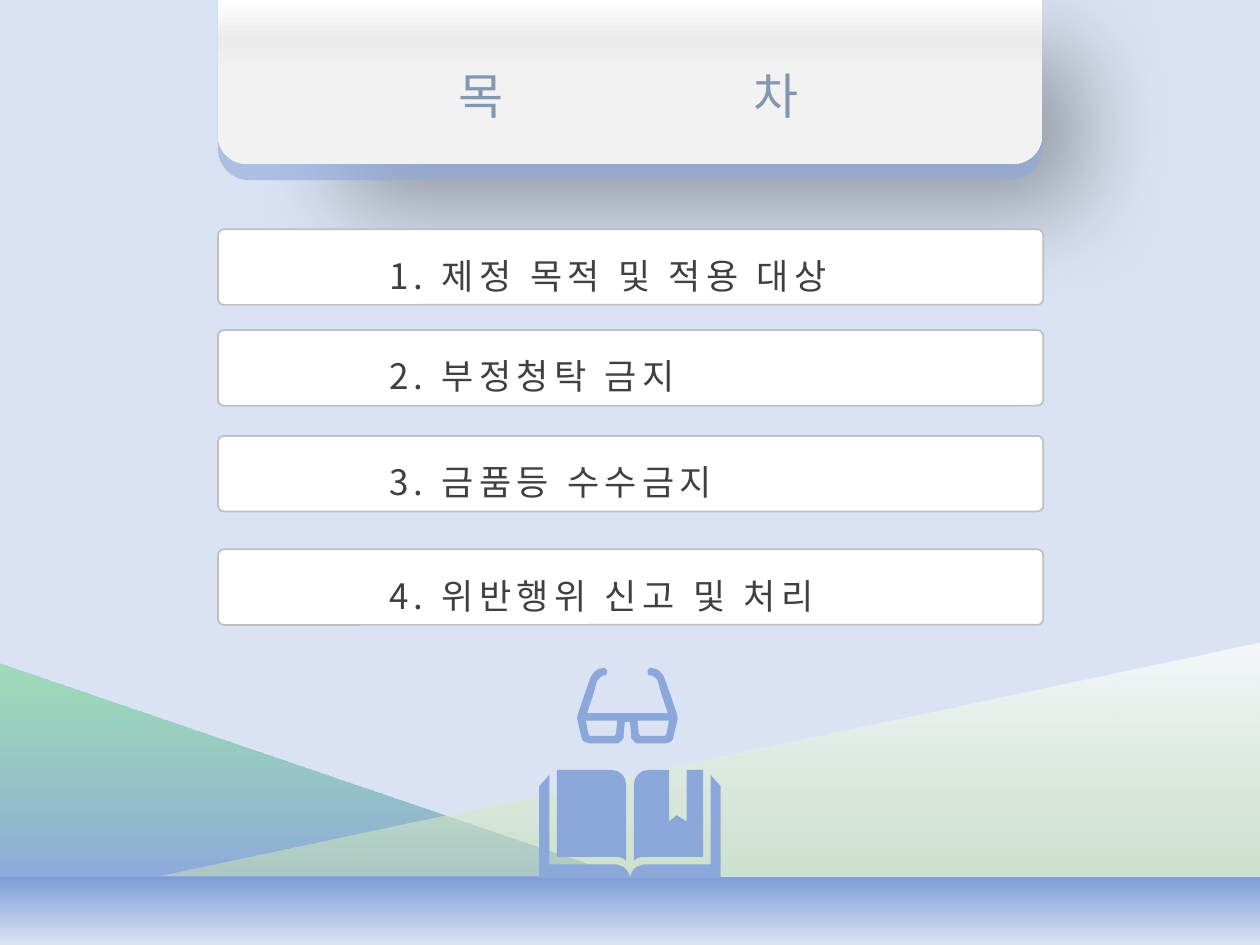
from lxml import etree
from pptx import Presentation
from pptx.dml.color import RGBColor
from pptx.enum.shapes import MSO_SHAPE
from pptx.enum.text import MSO_ANCHOR, MSO_AUTO_SIZE, PP_ALIGN
from pptx.oxml.ns import qn
from pptx.util import Inches, Pt

RECT = MSO_SHAPE.RECTANGLE
ROUNDED = MSO_SHAPE.ROUNDED_RECTANGLE
TAB_SHEET = MSO_SHAPE.ROUND_2_SAME_RECTANGLE
HILL = MSO_SHAPE.RIGHT_TRIANGLE

COLORS = {
    "sky": "DAE3F3", "ground": "7E9DD7", "blue": "8FAADC", "icon": "8CA8DB",
    "green": "79D595", "pale_green": "C5E0B4", "white": "FFFFFF",
    "sheet_shade": "ECECEC", "sheet": "F2F2F2", "border": "BFBFBF",
    "title": "8497B0", "item": "404040", "shadow": "000000",
}
FONT = "Noto Sans CJK KR"
ITEMS = [  # card top, text
    (1.82, "1. 제정 목적 및 적용 대상"),
    (2.62, "2. 부정청탁 금지"),
    (3.46, "3. 금품등 수수금지"),
    (4.36, "4. 위반행위 신고 및 처리"),
]

# Icon outlines in inches: left halves, completed by mirroring
BOOK_AXIS, GLASSES_AXIS = 5, 4.98
PAGE = [(4.97, 6.83), (4.97, 6.23), (4.96, 6.18), (4.94, 6.15), (4.9, 6.12),
        (4.85, 6.11), (4.42, 6.11), (4.42, 6.8), (4.9, 6.8), (4.94, 6.81)]
BOOKMARK = [(5.31, 6.11), (5.31, 6.52), (5.37, 6.47), (5.45, 6.52), (5.45, 6.11)]
COVER_HALF = [(5, 6.96), (4.99, 6.93), (4.97, 6.9), (4.95, 6.88), (4.92, 6.87),
              (4.89, 6.86), (4.36, 6.86), (4.36, 6.15), (4.28, 6.24), (4.28, 6.97)]
FRAME_HALF = [(4.96, 5.73), (4.95, 5.83), (4.95, 5.86), (4.93, 5.88), (4.91, 5.9),
              (4.68, 5.9), (4.64, 5.89), (4.62, 5.87), (4.61, 5.83), (4.58, 5.7),
              (4.59, 5.66), (4.64, 5.51), (4.69, 5.37), (4.72, 5.33), (4.75, 5.31),
              (4.8, 5.3), (4.82, 5.32), (4.82, 5.34), (4.81, 5.36), (4.79, 5.36),
              (4.76, 5.38), (4.74, 5.4), (4.71, 5.51), (4.66, 5.66)]
LENS = [(4.65, 5.72), (4.9, 5.72), (4.89, 5.82), (4.88, 5.84), (4.68, 5.84), (4.67, 5.82)]


def rgb(name):
    return RGBColor.from_string(COLORS[name])


def set_all(target, values):
    for name, value in values.items():
        setattr(target, name, value)


def add_color(parent, name, alpha=100):
    color = etree.SubElement(parent, qn("a:srgbClr"), val=COLORS[name])
    if alpha < 100:
        etree.SubElement(color, qn("a:alpha"), val=str(alpha * 1000))
    return color


def add_panel(shapes, kind, box, fill=None, adjustments=(), flip=None):
    panel = shapes.add_shape(kind, *map(Inches, box))
    panel.shadow.inherit = False
    panel.line.fill.background()
    for i, value in enumerate(adjustments):
        panel.adjustments[i] = value
    if fill:
        panel.fill.solid()
        panel.fill.fore_color.rgb = rgb(fill)
    if flip:
        panel._element.spPr.find(qn("a:xfrm")).set(flip, "1")
    return panel


def set_gradient(panel, stops, clockwise=90):
    panel.fill.gradient()
    panel.fill.gradient_angle = 360 - clockwise
    stop_list = panel._element.spPr.find(qn("a:gradFill")).find(qn("a:gsLst"))
    for old_stop in list(stop_list):
        stop_list.remove(old_stop)
    for position, name, alpha in stops:
        stop = etree.SubElement(stop_list, qn("a:gs"), pos=str(position * 1000))
        add_color(stop, name, alpha)


def add_soft_shadow(panel):
    effects = panel._element.spPr.find(qn("a:effectLst"))
    shadow = etree.SubElement(effects, qn("a:outerShdw"), blurRad=str(Pt(55)),
                              dist=str(Pt(18)), dir="5400000", sx="90000", sy="90000",
                              algn="t", rotWithShape="0")
    add_color(shadow, "shadow", 50)


def write_text(frame, text, size, color, spacing, frame_format, paragraph_format):
    set_all(frame, {"word_wrap": True, "auto_size": MSO_AUTO_SIZE.SHAPE_TO_FIT_TEXT,
                    **frame_format})
    paragraph = frame.paragraphs[0]
    set_all(paragraph, paragraph_format)
    run = paragraph.add_run()
    run.text = text
    set_all(run.font, {"size": Pt(size), "name": FONT})
    run.font.color.rgb = rgb(color)
    properties = run.font._element
    properties.set("spc", str(spacing * 100))
    etree.SubElement(properties, qn("a:ea"), typeface=FONT)
    return paragraph


def mirror(points, axis):
    return [(round(2 * axis - x, 2), y) for x, y in points]


def symmetric(half, axis):
    return half + mirror(half, axis)[::-1]


def add_outline(shapes, *contours):
    def to_emu(points):
        return [(Inches(x), Inches(y)) for x, y in points]

    first, *holes = map(to_emu, contours)
    builder = shapes.build_freeform(*first[0])
    builder.add_line_segments(first[1:], close=True)
    for hole in holes:
        builder.move_to(*hole[0])
        builder.add_line_segments(hole[1:], close=True)
    outline = builder.convert_to_shape()
    outline.shadow.inherit = False
    outline.fill.solid()
    outline.fill.fore_color.rgb = rgb("icon")
    outline.line.fill.background()


def add_landscape(shapes):
    ground = add_panel(shapes, RECT, (0, 6.96, 10.01, 0.54))
    set_gradient(ground, [(0, "ground", 100), (100, "sky", 100)])
    add_panel(shapes, RECT, (-0.01, 0, 10.01, 6.96), "sky")


def add_title_sheet(shapes):
    edge = add_panel(shapes, TAB_SHEET, (1.73, 0.01, 6.54, 1.42), "blue", (0.175, 0), "flipV")
    edge_color = edge._element.spPr.find(qn("a:solidFill"))[0]
    etree.SubElement(edge_color, qn("a:alpha"), val="61000")
    add_soft_shadow(edge)
    sheet = add_panel(shapes, TAB_SHEET, (1.73, 0, 6.54, 1.3), None, (0.175, 0), "flipV")
    set_gradient(sheet, [(0, "white", 100), (24, "sheet_shade", 100), (46, "sheet", 100)], 270)


def add_hills(shapes):
    left_hill = add_panel(shapes, HILL, (-0.01, 5.26, 4.99, 1.7))
    set_gradient(left_hill, [(0, "green", 58), (100, "blue", 100)])
    right_hill = add_panel(shapes, HILL, (1.26, 5.1, 8.74, 1.85), flip="flipH")
    set_gradient(right_hill, [(0, "white", 74), (100, "pale_green", 56)])


def place_title(shapes):
    title = shapes.title
    shapes._spTree.append(title._element)  # in front of the sheet
    set_all(title, {"left": Inches(1.26), "top": Inches(0.47),
                    "width": Inches(7.47), "height": Inches(0.57)})
    paragraph = write_text(
        title.text_frame, "목\t차", 28, "title", -1,
        {"vertical_anchor": MSO_ANCHOR.MIDDLE, "margin_left": Inches(2.38)},
        {"alignment": PP_ALIGN.LEFT, "space_after": Pt(12)})
    tabs = etree.SubElement(paragraph._p.get_or_add_pPr(), qn("a:tabLst"))
    etree.SubElement(tabs, qn("a:tab"), pos=str(Inches(2.34)), algn="l")


def add_book_and_glasses(shapes):
    icon = shapes.add_group_shape().shapes
    right_page = mirror(PAGE, BOOK_AXIS)
    add_outline(icon, PAGE)
    add_outline(icon, symmetric(COVER_HALF, BOOK_AXIS))
    add_outline(icon, right_page[:6] + BOOKMARK + right_page[6:])
    add_outline(icon, symmetric(FRAME_HALF, GLASSES_AXIS), LENS, mirror(LENS, GLASSES_AXIS))


def add_item(shapes, top, text):
    item = shapes.add_group_shape().shapes
    card = add_panel(item, ROUNDED, (1.73, top, 6.55, 0.6), "white", (0.079,))
    card.line.color.rgb = rgb("border")
    card.line.width = Pt(1)
    label = item.add_textbox(*map(Inches, (2.99, top - 0.02, 5.2, 0.61)))
    write_text(label.text_frame, text, 20, "item", 3, {}, {"line_spacing": 1.5})


def main():
    deck = Presentation()
    set_all(deck, {"slide_width": Inches(10), "slide_height": Inches(7.5)})
    shapes = deck.slides.add_slide(deck.slide_layouts[5]).shapes
    # Background and heading
    add_landscape(shapes)
    add_title_sheet(shapes)
    add_hills(shapes)
    place_title(shapes)
    # Icon and contents
    add_book_and_glasses(shapes)
    for top, text in ITEMS:
        add_item(shapes, top, text)
    deck.save("out.pptx")


if __name__ == "__main__":
    main()
